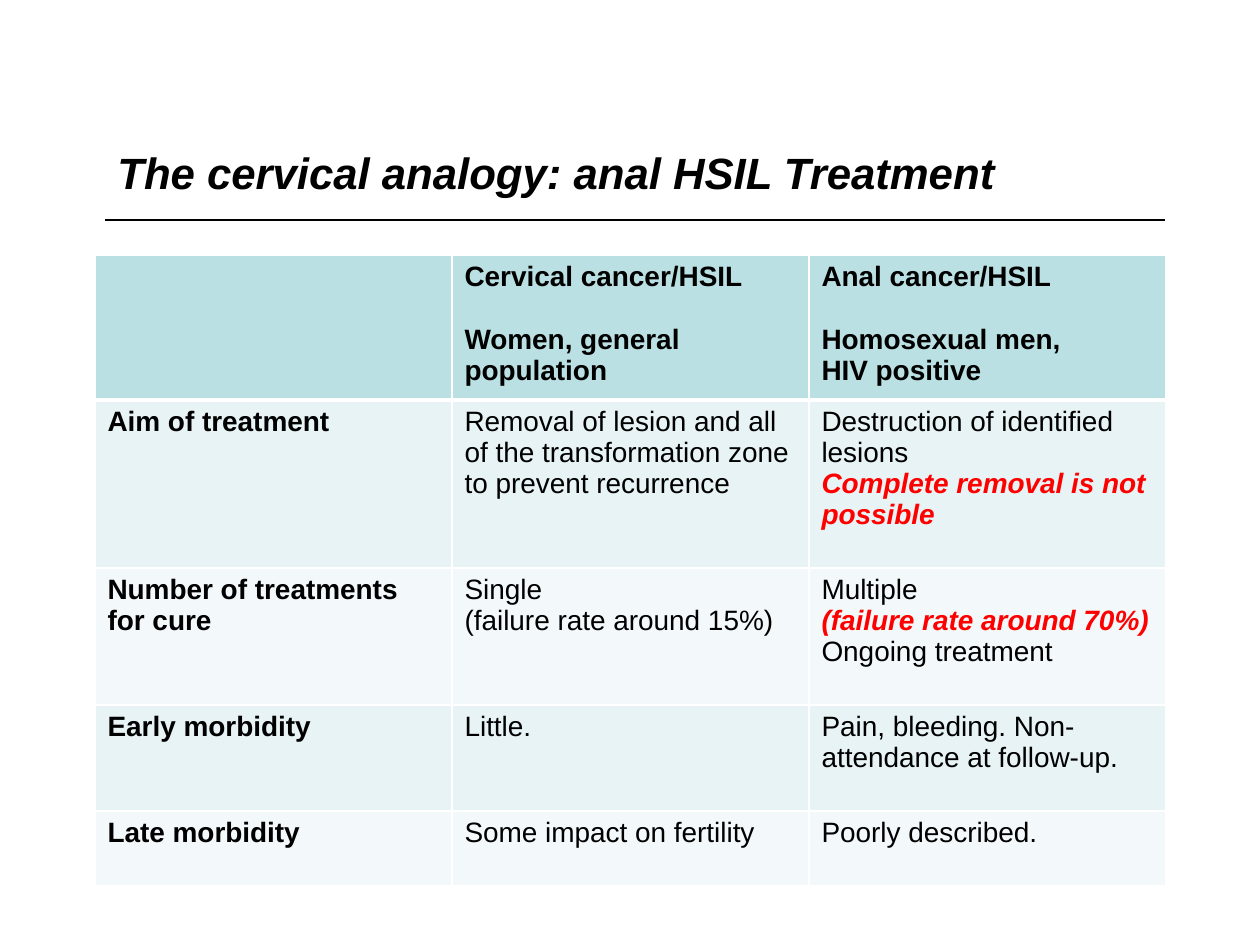
from dataclasses import dataclass
from lxml.etree import SubElement
from pptx import Presentation
from pptx.dml.color import RGBColor as Rgb
from pptx.enum.shapes import MSO_CONNECTOR as Link
from pptx.enum.text import MSO_ANCHOR as Anchor
from pptx.oxml.ns import qn
from pptx.util import Emu, Pt


@dataclass(frozen=True)
class Theme:
    """Hold the colours and type sizes of the slide."""
    font: str = "Arial"
    ink: str = "000000"
    alert: str = "FF0000"
    edge: str = "FFFFFF"
    head: str = "BBE0E3"
    odd: str = "E7F3F4"
    even: str = "F3F9FA"
    title: int = 25
    body: int = 16


LOOK = Theme()
SCALE = 914400 / 126
HEIGHTS = (136, 168, 137, 106, 75)
BOLD = {"bold": True}
GAP = {"bold": True, "before": 18}
ALERT = {"bold": True, "italic": True, "color": LOOK.alert}
ROWS = (
    ((),
     (("Cervical cancer/HSIL", BOLD), ("Women, general population", GAP)),
     (("Anal cancer/HSIL", BOLD), ("Homosexual men,", GAP), ("HIV positive", BOLD))),
    ((("Aim of treatment", BOLD),),
     (("Removal of lesion and all of the transformation zone to prevent recurrence", {}),),
     (("Destruction of identified lesions", {}),
      ("Complete removal is not possible", ALERT))),
    ((("Number of treatments for cure", BOLD),),
     (("Single", {}), ("(failure rate around 15%)", {})),
     (("Multiple", {}), ("(failure rate around 70%)", ALERT), ("Ongoing treatment", {}))),
    ((("Early morbidity", BOLD),),
     (("Little.", {}),),
     (("Pain, bleeding. Non-attendance at follow-up.", {}),)),
    ((("Late morbidity", BOLD),),
     (("Some impact on fertility", {}),),
     (("Poorly described.", {}),)),
)


def px(*marks):
    """Turn pixel lengths into EMU."""
    return [Emu(round(mark * SCALE)) for mark in marks]


def write(para, text, size=LOOK.body, bold=False, italic=False, color=LOOK.ink, before=0):
    """Put formatted text into a paragraph."""
    run = para.add_run()
    run.text = text
    font = run.font
    font.name, font.size = LOOK.font, Pt(size)
    font.bold, font.italic = bold, italic
    font.color.rgb = Rgb.from_string(color)
    if before:
        para.space_before = Pt(before)


def add_title(slide, text):
    """Add the slide title."""
    frame = slide.shapes.add_textbox(*px(105, 135, 1071, 84)).text_frame
    frame.word_wrap = True
    frame.vertical_anchor = Anchor.MIDDLE
    frame.margin_bottom, = px(16)
    write(frame.paragraphs[0], text, size=LOOK.title, bold=True, italic=True)


def add_rule(slide):
    """Add the thin line under the title."""
    rule = slide.shapes.add_connector(Link.STRAIGHT, *px(105, 220, 1165, 220))
    rule.line.color.rgb = Rgb.from_string(LOOK.ink)
    rule.line.width = Pt(0.75)
    SubElement(rule._element.spPr, qn("a:effectLst"))


def add_edge(cell, side, width):
    """Draw one border of a cell."""
    props = cell._tc.get_or_add_tcPr()
    line = SubElement(props, qn(f"a:ln{side}"), w=str(Pt(width)))
    fill = SubElement(line, qn("a:solidFill"))
    SubElement(fill, qn("a:srgbClr"), val=LOOK.edge)


def fill_cell(cell, lines, row):
    """Style a cell and write its lines."""
    thick = {(0, "B"): 3, (1, "T"): 3}
    for side in "LRTB":
        add_edge(cell, side, thick.get((row, side), 1))
    shade = (LOOK.even, LOOK.odd)[row % 2] if row else LOOK.head
    cell.fill.solid()
    cell.fill.fore_color.rgb = Rgb.from_string(shade)
    frame = cell.text_frame
    for spot, (text, style) in enumerate(lines):
        para = frame.add_paragraph() if spot else frame.paragraphs[0]
        write(para, text, **style)


def add_grid(slide):
    """Add the comparison table."""
    box = px(95, 255, 1071, sum(HEIGHTS))
    grid = slide.shapes.add_table(len(ROWS), len(ROWS[0]), *box).table
    for col in grid.columns:
        col.width, = px(357)
    for row, (high, cells) in enumerate(zip(HEIGHTS, ROWS)):
        grid.rows[row].height, = px(high)
        for col, lines in enumerate(cells):
            fill_cell(grid.cell(row, col), lines, row)


def main():
    """Build and save the slide."""
    deck = Presentation()
    deck.slide_width, deck.slide_height = px(1260, 945)
    slide = deck.slides.add_slide(deck.slide_layouts[6])
    add_rule(slide)
    add_title(slide, "The cervical analogy: anal HSIL Treatment")
    add_grid(slide)
    deck.save("out.pptx")


if __name__ == "__main__":
    main()
